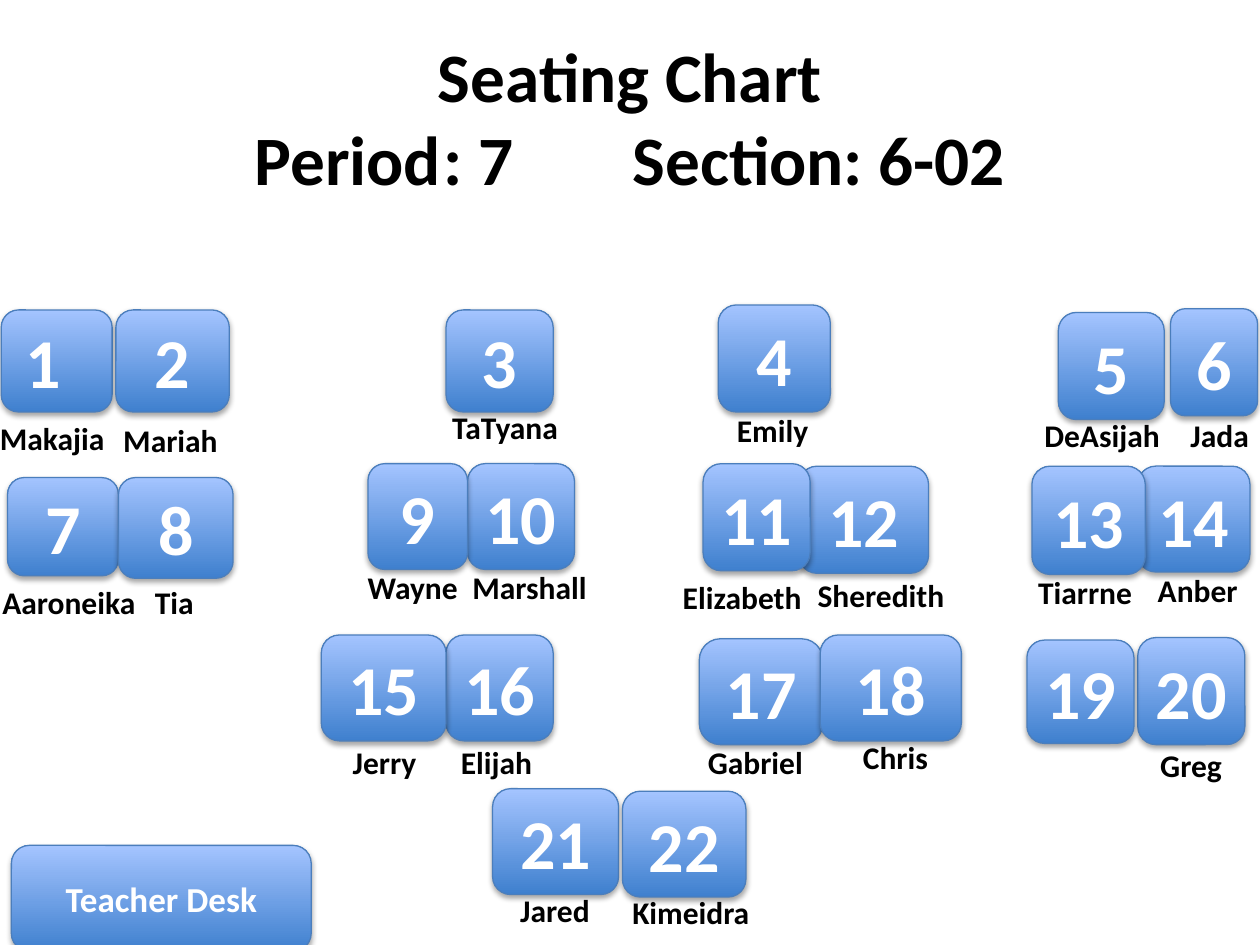
"""Build a classroom seating chart slide with numbered desks and student names."""
from dataclasses import dataclass

from pptx import Presentation
from pptx.dml.color import RGBColor
from pptx.enum.shapes import MSO_SHAPE
from pptx.enum.text import MSO_ANCHOR, MSO_AUTO_SIZE as AutoSize, PP_ALIGN
from pptx.shapes.autoshape import Shape
from pptx.slide import Slide
from pptx.text.text import _Paragraph as Paragraph
from pptx.util import Inches, Pt

FONT = "Calibri"
COLORS = {
    "text": "000000",
    "desk_text": "FFFFFF",
    "desk_bottom": "3F80CE",
    "desk_top": "A4C4FF",
    "desk_line": "4B7EBC",
}
LABEL_HEIGHT = 0.4


@dataclass(frozen=True)
class Desk:
    text: str
    left: float
    top: float
    width: float
    height: float
    size: float = 40
    corner: float = 0.17


@dataclass(frozen=True)
class Label:
    name: str
    left: float
    top: float
    width: float


DESKS = [
    Desk("1\t", 0.01, 2.46, 0.88, 0.81),
    Desk("2", 0.92, 2.46, 0.9, 0.81),
    Desk("3", 3.54, 2.46, 0.85, 0.81),
    Desk("4", 5.7, 2.42, 0.89, 0.85),
    Desk("6", 9.29, 2.45, 0.69, 0.85),
    Desk("5", 8.4, 2.48, 0.84, 0.85),
    Desk("7", 0.06, 3.79, 0.88, 0.78),
    Desk("8", 0.94, 3.79, 0.91, 0.8),
    Desk("10", 3.71, 3.68, 0.85, 0.84),
    Desk("9", 2.92, 3.68, 0.79, 0.84),
    Desk("12", 6.34, 3.7, 1.03, 0.85),
    Desk("11", 5.58, 3.68, 0.85, 0.85),
    Desk("14", 9.03, 3.7, 0.89, 0.84),
    Desk("13", 8.19, 3.7, 0.9, 0.86),
    Desk("16", 3.54, 5.04, 0.85, 0.84),
    Desk("15", 2.55, 5.04, 0.99, 0.84),
    Desk("17", 5.55, 5.07, 0.98, 0.84, corner=0.2),
    Desk("18", 6.51, 5.04, 1.12, 0.84),
    Desk("20", 9.03, 5.06, 0.85, 0.85),
    Desk("19", 8.15, 5.08, 0.85, 0.82),
    Desk("21", 3.91, 6.26, 1, 0.84),
    Desk("22", 4.94, 6.28, 0.98, 0.84),
    Desk("Teacher Desk", 0.09, 6.71, 2.38, 0.84, size=20),
]

LABELS = [
    Label("Makajia", -0.1, 3.28, 1.04),
    Label("Mariah", 0.88, 3.29, 0.96),
    Label("TaTyana", 3.49, 3.19, 1.05),
    Label("Emily", 5.75, 3.21, 0.78),
    Label("DeAsijah", 8.19, 3.25, 1.13),
    Label("Jada", 9.35, 3.25, 0.67),
    Label("Aaroneika", -0.08, 4.58, 1.27),
    Label("Tia", 1.13, 4.58, 0.51),
    Label("Wayne", 2.82, 4.46, 0.92),
    Label("Marshall", 3.65, 4.46, 1.12),
    Label("Elizabeth", 5.32, 4.54, 1.15),
    Label("Sheredith", 6.39, 4.52, 1.22),
    Label("Tiarrne", 8.14, 4.5, 0.96),
    Label("Anber", 9.09, 4.48, 0.84),
    Label("Jerry", 2.7, 5.85, 0.72),
    Label("Elijah", 3.56, 5.85, 0.77),
    Label("Gabriel", 5.52, 5.85, 0.96),
    Label("Chris", 6.75, 5.81, 0.72),
    Label("Greg", 9.11, 5.87, 0.71),
    Label("Jared", 4.03, 7.02, 0.76),
    Label("Kimeidra", 4.92, 7.04, 1.14),
]


def color(name: str) -> RGBColor:
    return RGBColor.from_string(COLORS[name])


def add_run(paragraph: Paragraph, text: str, size: float, color_name: str) -> None:
    run = paragraph.add_run()
    run.text = text
    run.font.name = FONT
    run.font.size = Pt(size)
    run.font.bold = True
    run.font.color.rgb = color(color_name)


def fill_title(title: Shape) -> None:
    title.left, title.top = Inches(0.5), Inches(0.3)
    title.width, title.height = Inches(9), Inches(1.25)
    frame = title.text_frame
    frame.auto_size = AutoSize.NONE
    frame.vertical_anchor = MSO_ANCHOR.MIDDLE
    paragraph = frame.paragraphs[0]
    paragraph.alignment = PP_ALIGN.CENTER
    add_run(paragraph, "Seating Chart", 39.6, "text")
    paragraph.add_line_break()
    add_run(paragraph, "Period\t: 7\t\tSection: 6-02", 39.6, "text")


def draw_desk(slide: Slide, desk: Desk) -> None:
    """Draw a desk that keeps the soft drop shadow of the theme."""
    shape = slide.shapes.add_shape(
        MSO_SHAPE.ROUNDED_RECTANGLE,
        Inches(desk.left), Inches(desk.top), Inches(desk.width), Inches(desk.height),
    )
    shape.adjustments[0] = desk.corner
    shape.fill.gradient()
    shape.fill.gradient_angle = 90
    for stop, name, position in zip(
        shape.fill.gradient_stops, ("desk_bottom", "desk_top"), (0, 1)
    ):
        stop.color.rgb = color(name)
        stop.position = position
    shape.line.color.rgb = color("desk_line")
    shape.line.width = Pt(0.75)
    frame = shape.text_frame
    frame.vertical_anchor = MSO_ANCHOR.MIDDLE
    paragraph = frame.paragraphs[0]
    paragraph.alignment = PP_ALIGN.CENTER
    add_run(paragraph, desk.text, desk.size, "desk_text")


def draw_label(slide: Slide, label: Label) -> None:
    shape = slide.shapes.add_textbox(
        Inches(label.left), Inches(label.top), Inches(label.width), Inches(LABEL_HEIGHT)
    )
    frame = shape.text_frame
    frame.word_wrap = False
    frame.auto_size = AutoSize.SHAPE_TO_FIT_TEXT
    add_run(frame.paragraphs[0], label.name, 18, "text")


def main() -> None:
    presentation = Presentation()
    presentation.slide_width, presentation.slide_height = Inches(10), Inches(7.5)
    slide = presentation.slides.add_slide(presentation.slide_layouts[5])
    fill_title(slide.shapes.title)
    for desk in DESKS:
        draw_desk(slide, desk)
    for label in LABELS:
        draw_label(slide, label)
    presentation.save("out.pptx")


if __name__ == "__main__":
    main()
